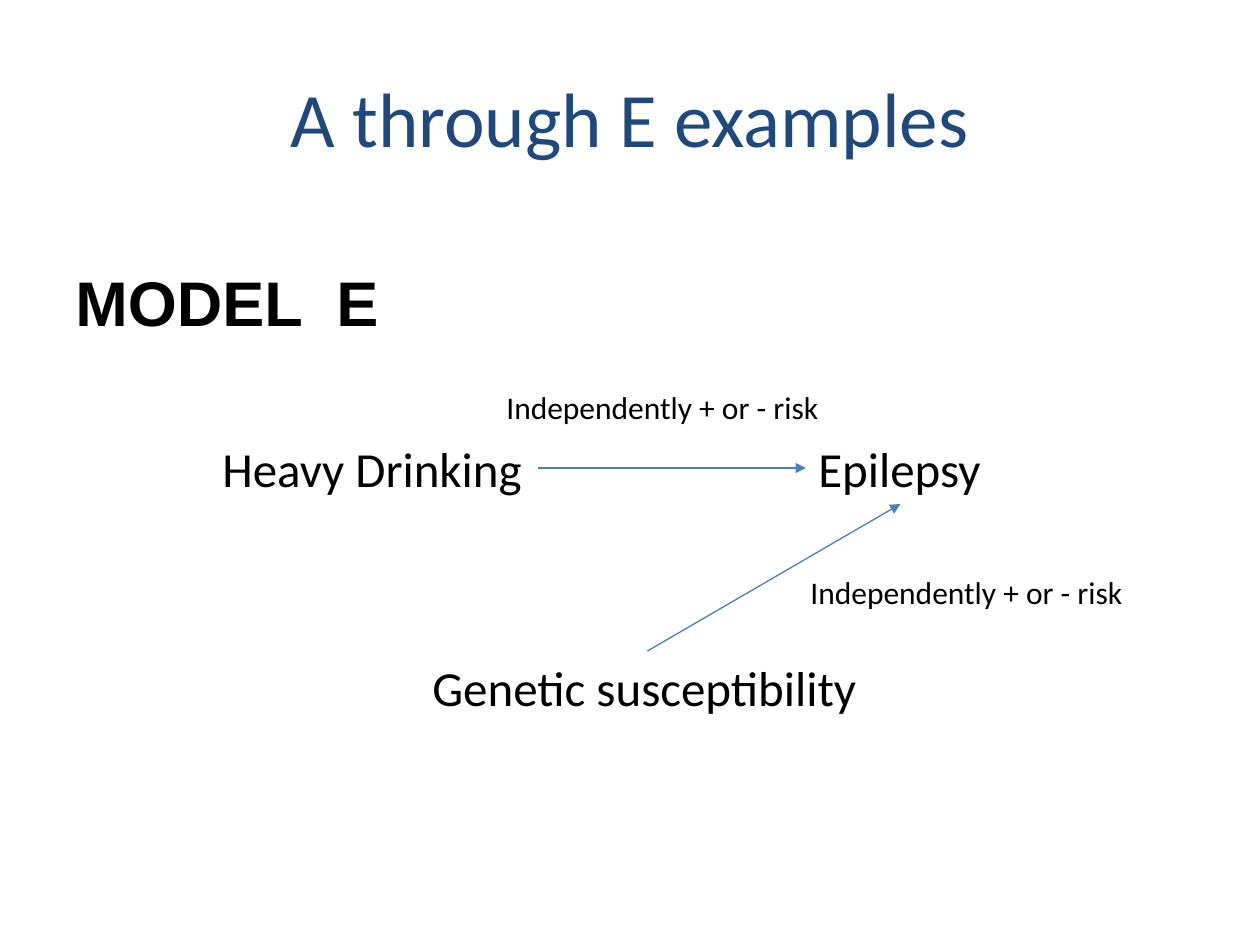
from dataclasses import dataclass

from lxml import etree
from pptx import Presentation
from pptx import util as u
from pptx.dml.color import RGBColor
from pptx.enum import shapes, text
from pptx.oxml.ns import qn

EMU_PER_PX = 914400 / 126
TOP, LEFT, BOTTOM, RIGHT = range(4)


@dataclass(frozen=True)
class Theme:
    """Colours, fonts and type sizes of the slide."""
    ink: str = "000000"
    title: str = "1F497D"
    arrow: str = "4B7EBC"
    body_font: str = "Calibri"
    heading_font: str = "Arial"
    title_size: int = 44
    heading_size: int = 36
    factor_size: int = 28
    label_size: int = 18
    arrow_width: float = 0.75


THEME = Theme()


def px(n):
    """Turn pixels into EMU."""
    return u.Emu(round(n * EMU_PER_PX))


def add_text(slide, words, box, size, font=THEME.body_font, color=THEME.ink, wrap=False):
    """Add a text box that grows with its text and return it."""
    sp = slide.shapes.add_textbox(*map(px, box))
    tf = sp.text_frame
    tf.word_wrap = wrap
    tf.auto_size = text.MSO_AUTO_SIZE.SHAPE_TO_FIT_TEXT
    p = tf.paragraphs[0]
    p.text = words
    p.font.name = font
    p.font.size = u.Pt(size)
    p.font.color.rgb = RGBColor.from_string(color)
    return sp


def add_title(slide, words, box):
    """Add the centred slide title."""
    sp = add_text(slide, words, box, THEME.title_size, color=THEME.title, wrap=True)
    tf = sp.text_frame
    tf.auto_size = text.MSO_AUTO_SIZE.NONE
    tf.vertical_anchor = text.MSO_ANCHOR.MIDDLE
    tf.paragraphs[0].alignment = text.PP_ALIGN.CENTER


def add_heading(slide, words, box):
    """Add the bold model heading."""
    sp = add_text(slide, words, box, THEME.heading_size, THEME.heading_font)
    sp.text_frame.paragraphs[0].font.bold = True


def add_factor(slide, words, box):
    """Add a factor of the causal diagram and return it."""
    return add_text(slide, words, box, THEME.factor_size)


def add_risk_label(slide, left, top):
    """Add the risk label of an arrow."""
    add_text(slide, "Independently + or - risk", (left, top, 486, 50),
             THEME.label_size, wrap=True)


def add_arrow(slide, start, start_side, end, end_side):
    """Join two factors with an arrow."""
    arrow = slide.shapes.add_connector(shapes.MSO_CONNECTOR.STRAIGHT, 0, 0, 0, 0)
    arrow.begin_connect(start, start_side)
    arrow.end_connect(end, end_side)
    arrow.line.color.rgb = RGBColor.from_string(THEME.arrow)
    arrow.line.width = u.Pt(THEME.arrow_width)
    etree.SubElement(arrow.line._get_or_add_ln(), qn("a:tailEnd"), type="triangle")
    etree.SubElement(arrow._element.spPr, qn("a:effectLst"))


def main():
    """Build the slide and save it."""
    prs = Presentation()
    prs.slide_width, prs.slide_height = px(1260), px(945)
    s = prs.slides.add_slide(prs.slide_layouts[6])

    add_title(s, "A through E examples", (63, 38, 1134, 158))
    drinking = add_factor(s, "Heavy Drinking", (210, 432, 328, 72))
    epilepsy = add_factor(s, "Epilepsy", (806, 432, 189, 72))
    genetics = add_factor(s, "Genetic susceptibility", (420, 651, 455, 72))
    add_arrow(s, genetics, TOP, epilepsy, BOTTOM)
    add_arrow(s, drinking, RIGHT, epilepsy, LEFT)
    add_heading(s, "MODEL  E", (63, 257, 335, 89))
    add_risk_label(s, 798, 567)
    add_risk_label(s, 494, 382)

    prs.save("out.pptx")


if __name__ == "__main__":
    main()
